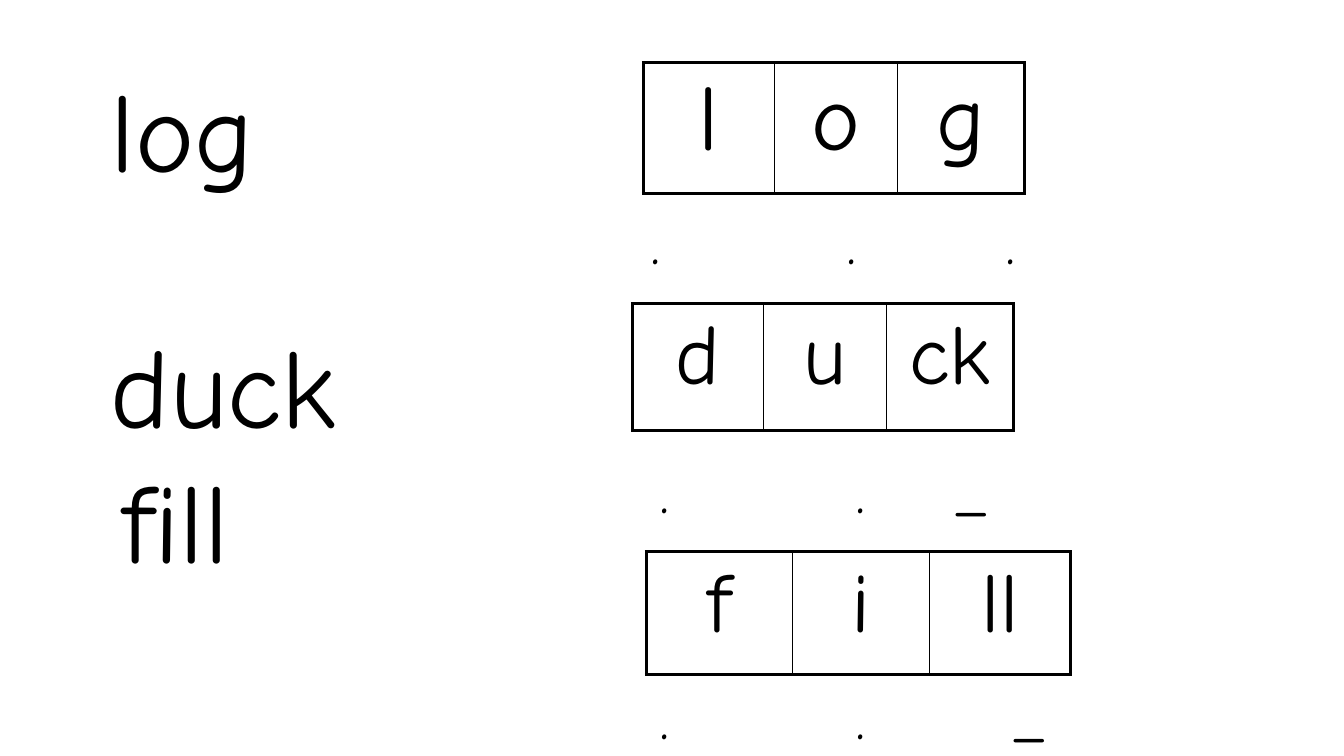
from lxml.etree import SubElement
from pptx import Presentation
from pptx.dml.color import RGBColor
from pptx.enum.text import PP_ALIGN
from pptx.oxml.ns import qn
from pptx.util import Inches, Pt

BLACK = RGBColor(0, 0, 0)
FONT = "Comic Neue"
THICK, THIN = Pt(2.25), Pt(1)


def add_run(para, text, size, font=FONT):
    run = para.add_run()
    run.text = text
    run.font.size = Pt(size)
    run.font.name = font
    run.font.color.rgb = BLACK


def add_box(slide, left, top, width, height):
    box = slide.shapes.add_textbox(
        Inches(left), Inches(top), Inches(width), Inches(height))
    box.text_frame.word_wrap = True
    return box.text_frame


def add_words(slide):
    frame = add_box(slide, 0.75, 0.7, 3.29, 6.03)
    lines = [
        ([(" ", "Calibri"), ("log", FONT)], -0.25, 10),
        ([("duck", FONT)], 0, 97),
        ([(" ", FONT), ("fill", FONT)], -0.25, 10),
    ]
    for index, (parts, indent, gap) in enumerate(lines):
        para = frame.add_paragraph() if index else frame.paragraphs[0]
        para.line_spacing = 0.9
        para.space_before = Pt(gap)
        props = para._p.get_or_add_pPr()
        props.set("marL", str(Inches(0.25)))
        props.set("indent", str(Inches(indent)))
        for text, font in parts:
            add_run(para, text, 80, font)


def add_edge(cell, side, width):
    line = SubElement(cell._tc.get_or_add_tcPr(), qn("a:" + side), w=str(width))
    fill = SubElement(line, qn("a:solidFill"))
    SubElement(fill, qn("a:srgbClr"), val=str(BLACK))


def add_grid(slide, left, top, widths, height, sounds, size):
    frame = slide.shapes.add_table(
        1, len(sounds), Inches(left), Inches(top),
        Inches(sum(widths)), Inches(height))
    table = frame.table
    table.first_row = table.horz_banding = False
    table.rows[0].height = Inches(height)
    last = len(sounds) - 1
    for index, (width, sound) in enumerate(zip(widths, sounds)):
        table.columns[index].width = Inches(width)
        cell = table.cell(0, index)
        para = cell.text_frame.paragraphs[0]
        para.alignment = PP_ALIGN.CENTER
        add_run(para, sound, size)
        add_edge(cell, "lnL", THIN if index else THICK)
        add_edge(cell, "lnR", THICK if index == last else THIN)
        add_edge(cell, "lnT", THICK)
        add_edge(cell, "lnB", THICK)
        cell.fill.background()


def add_marks(slide, left, top, width, marks, stops):
    para = add_box(slide, left, top, width, 0.77).paragraphs[0]
    tabs = SubElement(para._p.get_or_add_pPr(), qn("a:tabLst"))
    for stop in stops:
        SubElement(tabs, qn("a:tab"), pos=str(Inches(stop)), algn="l")
    add_run(para, " " + "\t".join(marks), 40)


def main():
    deck = Presentation()
    deck.slide_width, deck.slide_height = Inches(13.33), Inches(7.5)
    slide = deck.slides.add_slide(deck.slide_layouts[6])
    add_words(slide)
    small, large = (1.3, 1.22, 1.26), (1.45, 1.36, 1.4)
    add_grid(slide, 6.38, 0.62, small, 1.3, ["l", "o", "g"], 66)
    add_marks(slide, 6.18, 2.02, 3.99, "...", (2.13, 3.7))
    add_grid(slide, 6.27, 3.01, small, 1.26, ["d", "u", "ck"], 60)
    add_marks(slide, 6.27, 4.49, 3.94, ".._", (2.13, 3.13))
    add_grid(slide, 6.41, 5.47, large, 1.22, ["f", "i", "ll"], 60)
    add_marks(slide, 6.27, 6.73, 4.51, ".._", (2.13, 3.7))
    deck.save("out.pptx")


if __name__ == "__main__":
    main()
